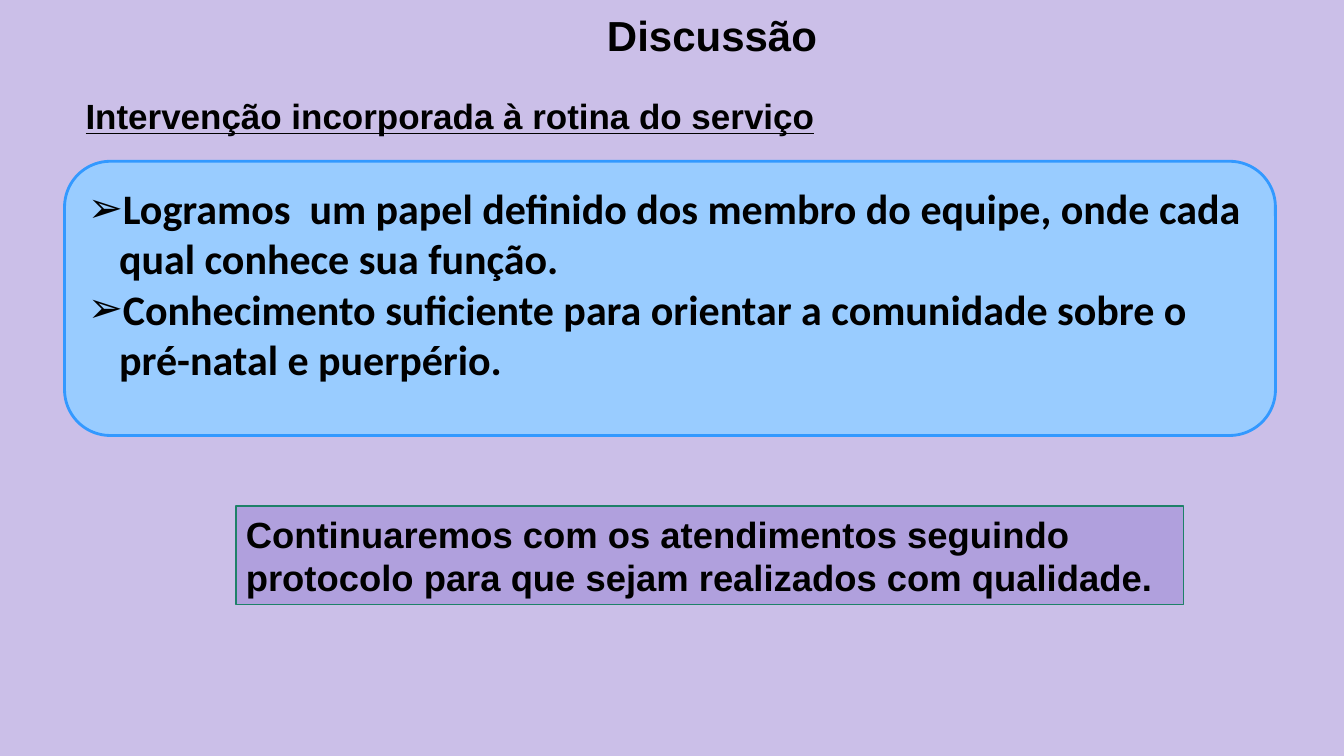
from lxml import etree
from pptx import Presentation
from pptx.dml.color import RGBColor
from pptx.enum.shapes import MSO_SHAPE as Geometry
from pptx.enum.text import MSO_ANCHOR as Anchor, MSO_AUTO_SIZE as AutoSize, PP_ALIGN as Align
from pptx.oxml.ns import qn
from pptx.util import Inches, Pt


def color(hex_value):
    return RGBColor.from_string(hex_value)


def write(holder, lines, anchor, **font_format):
    """Fill a shape with bold, black, left-aligned paragraphs."""
    frame = holder.text_frame
    frame.text = "\n".join(lines)
    frame.word_wrap = True
    frame.vertical_anchor = anchor
    for paragraph in frame.paragraphs:
        paragraph.alignment = Align.LEFT
        font = paragraph.runs[0].font
        font.color.rgb = color("000000")
        for name, value in {"bold": True, **font_format}.items():
            setattr(font, name, value)
    return frame


prs = Presentation()
prs.slide_width, prs.slide_height = Inches(13.33), Inches(7.5)
slide = prs.slides.add_slide(prs.slide_layouts[5])
slide.background.fill.solid()
slide.background.fill.fore_color.rgb = color("CBBFE8")

# Title and heading
title = slide.shapes.title
title.left, title.top = Inches(5.92), Inches(0.04)
title.width, title.height = Inches(2.9), Inches(0.61)
title_frame = write(title, ["Discussão"], Anchor.TOP, name="Arial", size=Pt(30))
title_frame.auto_size = AutoSize.SHAPE_TO_FIT_TEXT

heading = slide.shapes.add_textbox(Inches(0.75), Inches(0.89), Inches(7.51), Inches(0.52))
heading_frame = write(heading, ["Intervenção incorporada à rotina do serviço"], Anchor.TOP,
                      name="Arial", size=Pt(25), underline=True)
heading_frame.word_wrap = False
heading_frame.auto_size = AutoSize.SHAPE_TO_FIT_TEXT

# Results panel and closing statement
results = slide.shapes.add_shape(Geometry.FLOWCHART_ALTERNATE_PROCESS,
                                 Inches(0.64), Inches(1.6), Inches(12.01), Inches(2.72))
closing = slide.shapes.add_shape(Geometry.RECTANGLE,
                                 Inches(2.34), Inches(5.02), Inches(9.4), Inches(0.98))
for panel, fill, line, line_width in [(results, "99CCFF", "3399FF", 2),
                                      (closing, "B0A0DD", "1E8168", 1)]:
    panel.shadow.inherit = False
    panel.fill.solid()
    panel.fill.fore_color.rgb = color(fill)
    panel.line.color.rgb = color(line)
    panel.line.width = Pt(line_width)

results_frame = write(results, [
    "Logramos  um papel definido dos membro do equipe, onde cada qual conhece sua função.",
    "Conhecimento suficiente para orientar a comunidade sobre o pré-natal e puerpério.",
], Anchor.MIDDLE, name="Calibri", size=Pt(30))
results_frame.margin_bottom = Inches(0.35)
for paragraph in results_frame.paragraphs:
    properties = paragraph._p.get_or_add_pPr()
    properties.set("marL", str(Inches(0.31)))
    properties.set("indent", str(Inches(-0.31)))
    etree.SubElement(properties, qn("a:buFont"), typeface="Arial")
    etree.SubElement(properties, qn("a:buChar"), char="➢")

write(closing, [
    "Continuaremos com os atendimentos seguindo protocolo para que sejam realizados com qualidade.",
], Anchor.MIDDLE, name="Arial", size=Pt(26))

prs.save("out.pptx")
